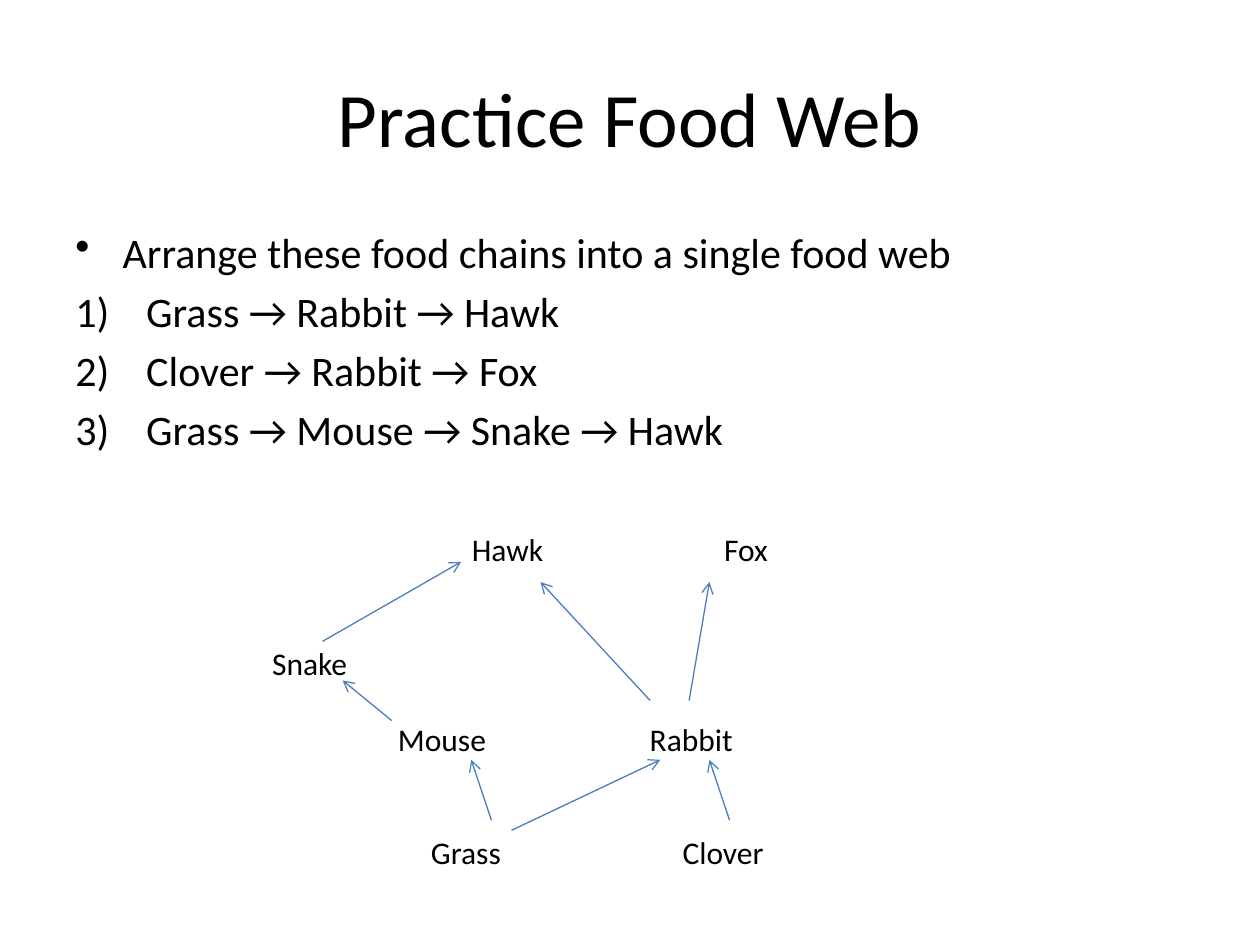
"""Build a slide that arranges three food chains into one food web."""
from dataclasses import dataclass

from lxml import etree
from pptx import Presentation
from pptx.dml.color import RGBColor
from pptx.enum.shapes import MSO_CONNECTOR
from pptx.enum.text import MSO_ANCHOR, PP_ALIGN
from pptx.oxml.ns import qn
from pptx.slide import Slide
from pptx.text.text import TextFrame, _Paragraph
from pptx.util import Pt

STRAIGHT = MSO_CONNECTOR.STRAIGHT
TOP, MIDDLE = MSO_ANCHOR.TOP, MSO_ANCHOR.MIDDLE
LEFT, CENTER = PP_ALIGN.LEFT, PP_ALIGN.CENTER


@dataclass(frozen=True)
class Theme:
    font: str = "Calibri"
    text: RGBColor = RGBColor(0x00, 0x00, 0x00)
    arrow: RGBColor = RGBColor(0x4B, 0x7E, 0xBC)
    title_size: float = 44
    body_size: float = 24
    label_size: float = 18
    arrow_width: float = 0.75


@dataclass(frozen=True)
class ListItem:
    text: str
    indent: float
    space_before: float
    marker: str
    marker_attributes: dict[str, str]


@dataclass(frozen=True)
class Organism:
    name: str
    center: float
    row: int


@dataclass(frozen=True)
class FeedingArrow:
    start: tuple[float, float]
    end: tuple[float, float]


THEME = Theme()
TITLE = "Practice Food Web"
TASK = "Arrange these food chains into a single food web"
CHAINS = (
    ("Grass", "Rabbit", "Hawk"),
    ("Clover", "Rabbit", "Fox"),
    ("Grass", "Mouse", "Snake", "Hawk"),
)
LIST_ITEMS = [ListItem(TASK, 27, 0, "a:buChar", {"char": "•"})] + [
    ListItem(" → ".join(chain), 40.5, 4.8, "a:buAutoNum", {"type": "arabicParenR"})
    for chain in CHAINS
]

WEB_TOP, ROW_PITCH = 313.5, 21.7
LABEL_WIDTH, LABEL_HEIGHT = 72, 22
ORGANISMS = (
    Organism("Hawk", 290, 0),
    Organism("Fox", 426.3, 0),
    Organism("Snake", 177, 3),
    Organism("Mouse", 252.6, 5),
    Organism("Rabbit", 395, 5),
    Organism("Grass", 266.3, 8),
    Organism("Clover", 413.2, 8),
)
FEEDING_ARROWS = (
    FeedingArrow((184.3, 366.5), (263.5, 321.1)),
    FeedingArrow((292.3, 474.5), (377.3, 434.2)),
    FeedingArrow((416.9, 468.7), (405.4, 434.2)),
    FeedingArrow((223.9, 411.8), (195.8, 388.8)),
    FeedingArrow((280.8, 468.7), (269.3, 434.2)),
    FeedingArrow((371.5, 400.3), (308.9, 332.6)),
    FeedingArrow((393.8, 400.3), (405.4, 332.6)),
)


def add_text_frame(slide: Slide, left: float, top: float, width: float,
                   height: float, anchor: MSO_ANCHOR) -> TextFrame:
    """Add a wrapping text box and return its frame."""
    box = slide.shapes.add_textbox(Pt(left), Pt(top), Pt(width), Pt(height))
    frame = box.text_frame
    frame.word_wrap = True
    frame.vertical_anchor = anchor
    return frame


def add_run(paragraph: _Paragraph, text: str, size: float, alignment: PP_ALIGN) -> None:
    """Add one styled run to an aligned paragraph."""
    paragraph.alignment = alignment
    run = paragraph.add_run()
    run.text = text
    run.font.name = THEME.font
    run.font.size = Pt(size)
    run.font.color.rgb = THEME.text


def add_list(slide: Slide, items: list[ListItem]) -> None:
    """Add the task and its numbered food chains."""
    frame = add_text_frame(slide, 36, 126, 648, 160, TOP)
    for index, item in enumerate(items):
        paragraph = frame.add_paragraph() if index else frame.paragraphs[0]
        add_run(paragraph, item.text, THEME.body_size, LEFT)
        paragraph.space_before = Pt(item.space_before)
        properties = paragraph._p.get_or_add_pPr()
        properties.set("marL", str(Pt(item.indent)))
        properties.set("indent", str(-Pt(item.indent)))
        etree.SubElement(properties, qn(item.marker), item.marker_attributes)


def add_organism(slide: Slide, organism: Organism) -> None:
    """Add an organism's name centred on its place in the web."""
    middle = WEB_TOP + organism.row * ROW_PITCH
    frame = add_text_frame(slide, organism.center - LABEL_WIDTH / 2,
                           middle - LABEL_HEIGHT / 2, LABEL_WIDTH, LABEL_HEIGHT, MIDDLE)
    frame.margin_left = frame.margin_right = frame.margin_top = frame.margin_bottom = Pt(0)
    add_run(frame.paragraphs[0], organism.name, THEME.label_size, CENTER)


def add_feeding_arrow(slide: Slide, arrow: FeedingArrow) -> None:
    """Add an arrow from the eaten to the eater."""
    connector = slide.shapes.add_connector(
        STRAIGHT, *(Pt(value) for value in arrow.start + arrow.end))
    connector.line.color.rgb = THEME.arrow
    connector.line.width = Pt(THEME.arrow_width)
    etree.SubElement(connector.line._get_or_add_ln(), qn("a:tailEnd"), {"type": "arrow"})
    etree.SubElement(connector._element.spPr, qn("a:effectLst"))


def main() -> None:
    """Build and save the presentation."""
    presentation = Presentation()
    presentation.slide_width, presentation.slide_height = Pt(720), Pt(540)
    slide = presentation.slides.add_slide(presentation.slide_layouts[6])
    title = add_text_frame(slide, 36, 21.6, 648, 90, MIDDLE)
    add_run(title.paragraphs[0], TITLE, THEME.title_size, CENTER)
    add_list(slide, LIST_ITEMS)
    for organism in ORGANISMS:
        add_organism(slide, organism)
    for arrow in FEEDING_ARROWS:
        add_feeding_arrow(slide, arrow)
    presentation.save("out.pptx")


if __name__ == "__main__":
    main()
